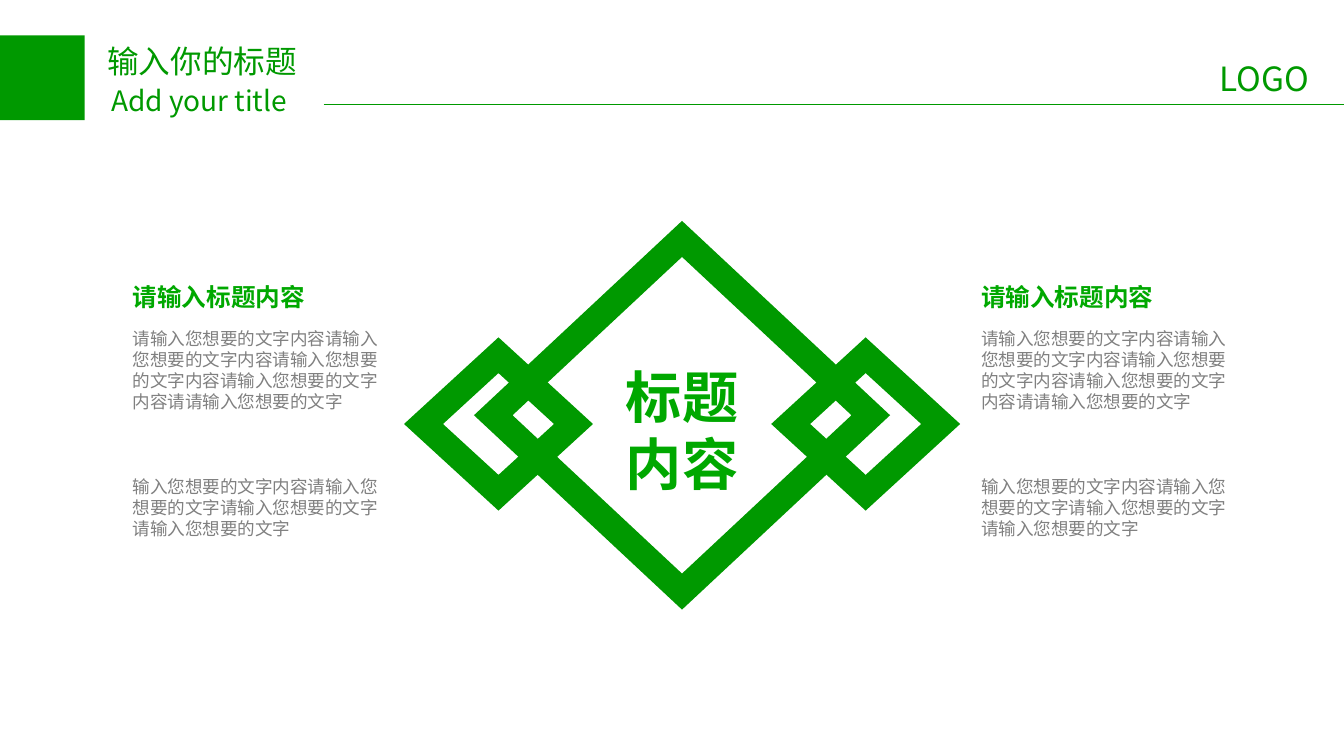
from dataclasses import dataclass

from lxml.etree import SubElement
from pptx import Presentation
from pptx.dml.color import RGBColor
from pptx.enum.shapes import MSO_CONNECTOR, MSO_SHAPE
from pptx.enum.text import MSO_AUTO_SIZE, PP_ALIGN
from pptx.oxml.ns import qn
from pptx.util import Inches, Pt


@dataclass(frozen=True)
class Theme:
    """Colours, fonts, type sizes and line widths of the slide."""
    green: RGBColor = RGBColor(0x00, 0x99, 0x00)
    bright: RGBColor = RGBColor(0x00, 0xA8, 0x00)
    grey: RGBColor = RGBColor(0x80, 0x80, 0x80)
    cjk: str = "Noto Sans CJK SC"
    latin: str = "Arial"
    title: int = 18
    subtitle: int = 16
    mark: int = 19
    center: int = 32
    heading: int = 14
    body: int = 10
    body_gap: int = 36
    rule: float = 0.75
    frame: int = 15


@dataclass(frozen=True)
class Box:
    """A rectangle in slide units that hands out areas of itself by share."""
    left: float
    top: float
    width: float
    height: float

    def share(self, x, y, w, h):
        """Return the inner box at the given shares of this box."""
        return Box(self.left + x * self.width, self.top + y * self.height,
                   w * self.width, h * self.height)

    def percent(self, x, y, w, h):
        """Return the inner box at the given percentages of this box."""
        return self.share(x / 100, y / 100, w / 100, h / 100)

    def emu(self):
        """Return the position and size as whole units."""
        return [round(v) for v in (self.left, self.top, self.width, self.height)]


THEME = Theme()
HEADING = "请输入标题内容"
BODY = [
    "请输入您想要的文字内容请输入您想要的文字内容请输入您想要的文字内容请输入您想要的文字",
    "内容请请输入您想要的文字",
    "输入您想要的文字内容请输入您想要的文字请输入您想要的文字请输入您想要的文字",
]


def add_text(slide, box, lines, size, color, font=THEME.cjk, bold=False,
             align=PP_ALIGN.LEFT, inset=True, wrap=True):
    """Add a text box with one paragraph per line and return its paragraphs."""
    frame = slide.shapes.add_textbox(*box.emu()).text_frame
    frame.word_wrap = wrap
    frame.auto_size = MSO_AUTO_SIZE.SHAPE_TO_FIT_TEXT
    if not inset:
        frame.margin_left = frame.margin_right = 0
        frame.margin_top = frame.margin_bottom = 0
    frame.text = "\n".join(lines)
    for paragraph in frame.paragraphs:
        paragraph.alignment = align
        paragraph.font.name = font
        paragraph.font.size = Pt(size)
        paragraph.font.bold = bold
        paragraph.font.color.rgb = color
        defaults = paragraph._p.pPr.find(qn("a:defRPr"))
        SubElement(defaults, qn("a:ea")).set("typeface", THEME.cjk)
    return frame.paragraphs


def add_diamond(slide, box):
    """Add an open diamond with a thick, sharp-cornered outline."""
    diamond = slide.shapes.add_shape(MSO_SHAPE.DIAMOND, *box.emu())
    diamond.shadow.inherit = False
    diamond.fill.background()
    diamond.line.color.rgb = THEME.green
    diamond.line.width = Pt(THEME.frame)
    outline = diamond._element.spPr.find(qn("a:ln"))
    SubElement(outline, qn("a:miter")).set("lim", "800000")


def add_header(slide, page):
    """Add the green block, both titles, the rule and the logo word."""
    block = slide.shapes.add_shape(
        MSO_SHAPE.RECTANGLE, *page.percent(0, 4.74, 6.3, 11.34).emu())
    block.shadow.inherit = False
    block.fill.solid()
    block.fill.fore_color.rgb = THEME.green
    block.line.fill.background()

    add_text(slide, page.percent(7.06, 4.74, 16.27, 6.77), ["输入你的标题"],
             THEME.title, THEME.green)
    add_text(slide, page.percent(7.34, 10.32, 16.27, 6.26), ["Add your title"],
             THEME.subtitle, THEME.green)

    left, top, width, _ = page.percent(24.08, 14.04, 75.92, 0).emu()
    rule = slide.shapes.add_connector(
        MSO_CONNECTOR.STRAIGHT, left, top, left + width, top)
    rule.line.color.rgb = THEME.green
    rule.line.width = Pt(THEME.rule)
    SubElement(rule._element.spPr, qn("a:effectLst"))

    add_text(slide, page.percent(89.84, 6.94, 9.03, 7.11), ["LOGO"],
             THEME.mark, THEME.green, wrap=False)


def add_column(slide, box):
    """Add a heading with its body text below."""
    paragraphs = add_text(slide, box.share(0, 0.18, 1, 0.82), BODY, THEME.body,
                          THEME.grey, font=THEME.latin, inset=False)
    paragraphs[-1].space_before = Pt(THEME.body_gap)
    add_text(slide, box.share(0, 0, 0.96, 0.11), [HEADING], THEME.heading,
             THEME.bright, bold=True, inset=False)


def add_emblem(slide, box):
    """Add the central title inside a large diamond with one on each side."""
    add_text(slide, box.share(0.27, 0.35, 0.46, 0.38), ["标题", "内容"],
             THEME.center, THEME.bright, bold=True,
             align=PP_ALIGN.CENTER, inset=False)
    large, small = 0.73, 0.29
    add_diamond(slide, box.share((1 - large) / 2, 0, large, 1))
    for x in (0, 1 - small):
        add_diamond(slide, box.share(x, 0.33, small, 0.39))


def main():
    """Build the slide and save it."""
    deck = Presentation()
    deck.slide_width, deck.slide_height = Inches(10.63), Inches(5.91)
    slide = deck.slides.add_slide(deck.slide_layouts[6])
    page = Box(0, 0, deck.slide_width, deck.slide_height)
    add_header(slide, page)
    for x in (73, 9.88):
        add_column(slide, page.percent(x, 37.73, 18.81, 34.35))
    add_emblem(slide, page.percent(31.51, 31.98, 38.48, 47.21))
    deck.save("out.pptx")


if __name__ == "__main__":
    main()
